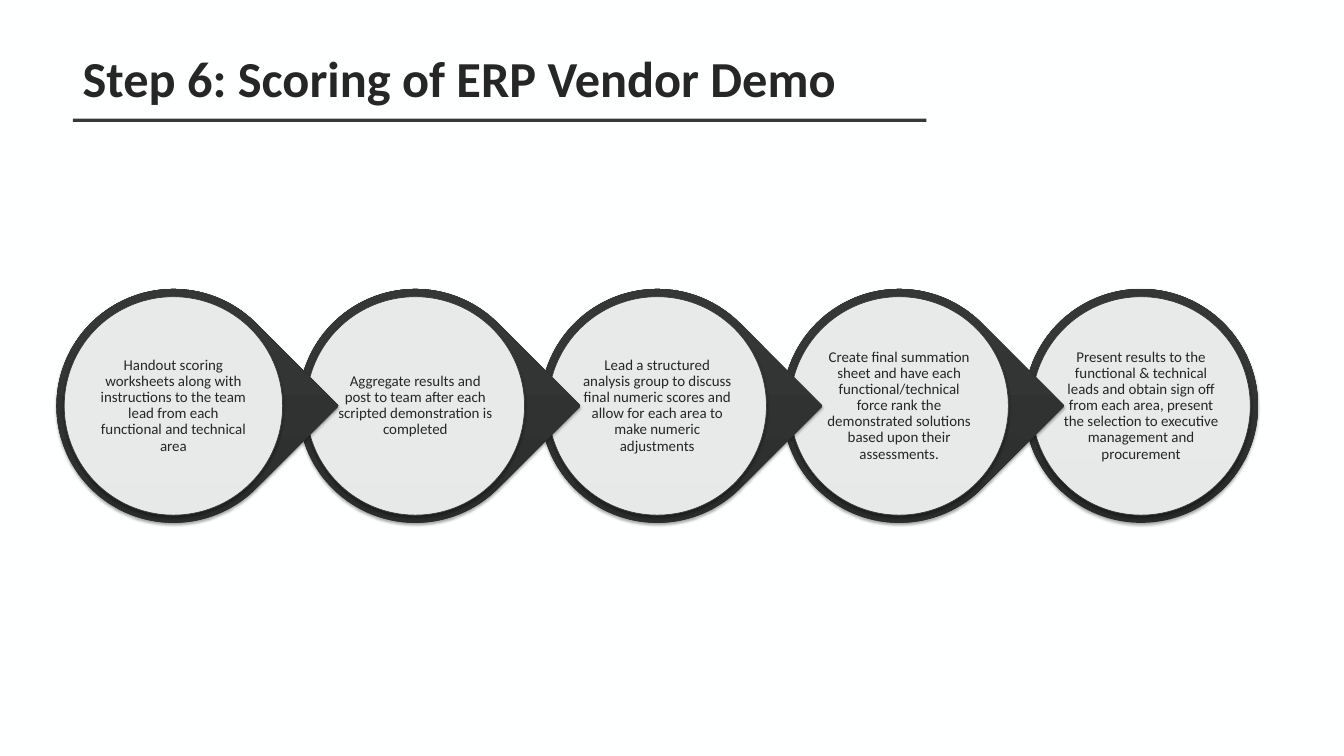
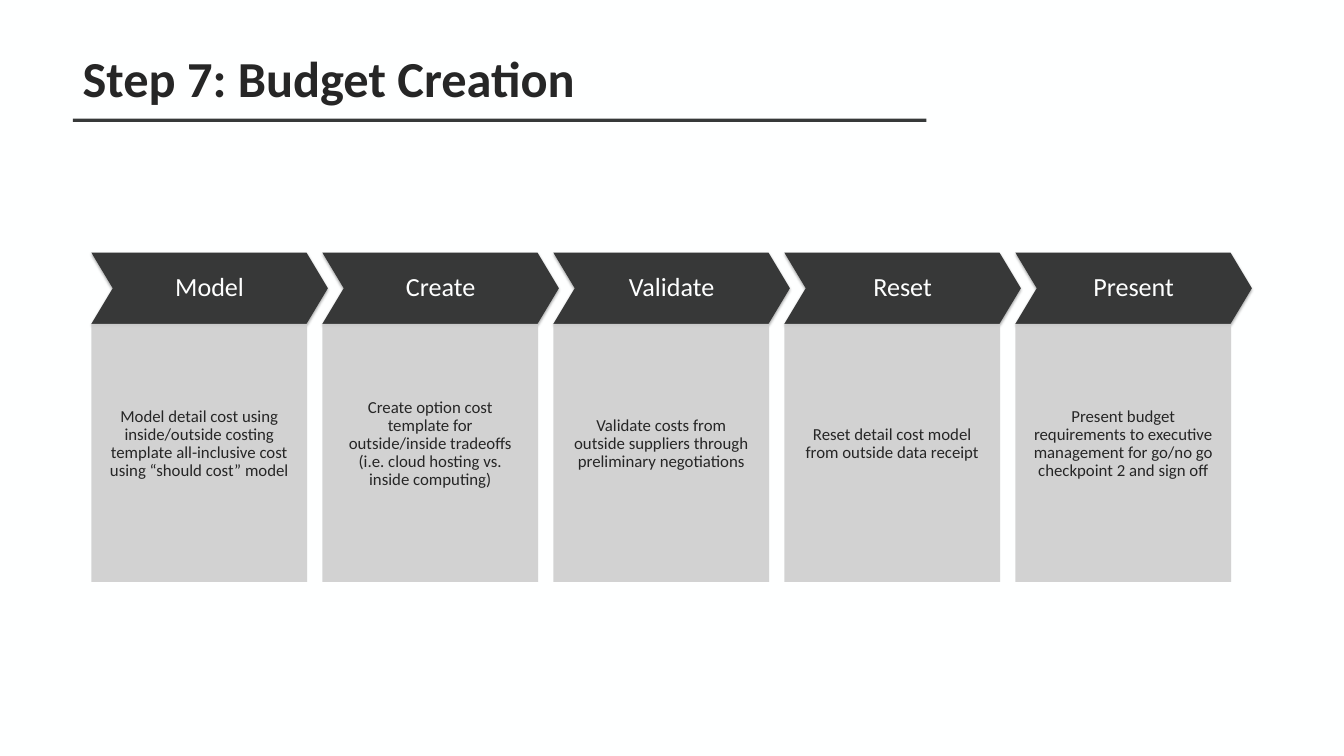
import lxml.etree
import pptx
import pptx.dml.color
import pptx.enum.shapes
import pptx.enum.text
import pptx.oxml.ns
import pptx.util

Pt = pptx.util.Pt
RGBColor = pptx.dml.color.RGBColor
SHAPE = pptx.enum.shapes.MSO_SHAPE
ALIGN = pptx.enum.text.PP_ALIGN
ANCHOR = pptx.enum.text.MSO_ANCHOR
qn = pptx.oxml.ns.qn

SCORING_TITLE = "Step 6: Scoring of ERP Vendor Demo"
SCORING_STEPS = [
    "Handout scoring worksheets along with instructions to the team lead from each "
    "functional and technical area",
    "Aggregate results and post to team after each scripted demonstration is completed",
    "Lead a structured analysis group to discuss final numeric scores and allow for "
    "each area to make numeric adjustments",
    "Create final summation sheet and have each functional/technical force rank the "
    "demonstrated solutions based upon their assessments.",
    "Present results to the functional & technical leads and obtain sign off from each "
    "area, present the selection to executive management and procurement",
]
BUDGET_TITLE = "Step 7: Budget Creation"
BUDGET_PHASES = [
    ("Model", "Model detail cost using inside/outside costing template all-inclusive "
              "cost using “should cost” model"),
    ("Create", "Create option cost template for outside/inside tradeoffs "
               "(i.e. cloud hosting vs. inside computing)"),
    ("Validate", "Validate costs from outside suppliers through preliminary negotiations"),
    ("Reset", "Reset detail cost model from outside data receipt"),
    ("Present", "Present budget requirements to executive management for go/no go "
                "checkpoint 2 and sign off"),
]

FONT = "Calibri"
WHITE = RGBColor(0xFE, 0xFF, 0xFF)
TEXT = RGBColor(0x26, 0x26, 0x26)
RULE = RGBColor(0x37, 0x39, 0x39)
DARK = RGBColor(0x37, 0x38, 0x38)
RING_BOTTOM = RGBColor(0x29, 0x2A, 0x2A)
RING_TOP = RGBColor(0x35, 0x36, 0x36)
PANEL = RGBColor(0xCE, 0xCE, 0xCE)

# Slide 6: rings that point at the next ring
RING_LEFT, RING_TOP_EDGE, RING_SIZE, RING_PITCH = 60.5, 309.6, 250.6, 259.2
DISC_SIZE = 234
# Slide 7: chevron headings above panels
PHASE_LEFT, PHASE_TOP, PHASE_PITCH = 97.9, 270.7, 247.5
CHEVRON_WIDTH, CHEVRON_HEIGHT = 253.4, 76.3
PANEL_WIDTH, PANEL_HEIGHT = 231.2, 276.5


def add_shape(slide, preset, left, top, width, height, color=None):
    shape = slide.shapes.add_shape(preset, Pt(left), Pt(top), Pt(width), Pt(height))
    shape.shadow.inherit = False
    shape.line.fill.background()
    if color is not None:
        shape.fill.solid()
        shape.fill.fore_color.rgb = color
    return shape


def add_alpha(color_element, percent):
    alpha = lxml.etree.SubElement(color_element, qn("a:alpha"))
    alpha.set("val", str(percent * 1000))


def make_translucent(shape):
    add_alpha(shape.element.spPr.find(qn("a:solidFill"))[0], 90)


def add_shadow(shape):
    effects = shape.element.spPr.find(qn("a:effectLst"))
    shadow = lxml.etree.SubElement(
        effects, qn("a:outerShdw"), blurRad=str(Pt(3.1)), dist=str(Pt(1.8)),
        dir="5400000", rotWithShape="0")
    add_alpha(lxml.etree.SubElement(shadow, qn("a:srgbClr"), val="000000"), 35)


def fill_ring(ring):
    """Shade upright from dark at the bottom, whatever the ring's rotation."""
    ring.fill.gradient()
    ring.fill.gradient_angle = 90
    for stop, position, color in zip(
            ring.fill.gradient_stops, (0, 0.8), (RING_BOTTOM, RING_TOP)):
        stop.position = position
        stop.color.rgb = color
    ring.element.spPr.find(qn("a:gradFill")).set("rotWithShape", "0")


def set_insets(frame, left, top, right, bottom):
    frame.margin_left, frame.margin_top = Pt(left), Pt(top)
    frame.margin_right, frame.margin_bottom = Pt(right), Pt(bottom)


def format_font(paragraph, size, color, bold=False):
    for run in paragraph.runs:
        run.font.name = FONT
        run.font.size = Pt(size)
        run.font.bold = bold
        run.font.color.rgb = color


def write_centered(shape, text, size, color, insets):
    frame = shape.text_frame
    frame.text = text
    frame.word_wrap = True
    frame.vertical_anchor = ANCHOR.MIDDLE
    set_insets(frame, *insets)
    paragraph = frame.paragraphs[0]
    paragraph.alignment = ALIGN.CENTER
    paragraph.line_spacing = 0.9
    format_font(paragraph, size, color)


def add_titled_slide(presentation, text):
    slide = presentation.slides.add_slide(presentation.slide_layouts[5])
    add_shape(slide, SHAPE.RECTANGLE, 78.1, 127.1, 914.4, 3.6, RULE)
    title = slide.shapes.title
    title.left, title.top, title.width, title.height = Pt(81.4), Pt(44), Pt(1245), Pt(71.3)
    frame = title.text_frame
    frame.text = text
    frame.auto_size = pptx.enum.text.MSO_AUTO_SIZE.NONE
    frame.vertical_anchor = ANCHOR.TOP
    set_insets(frame, 7.2, 6.5, 7.2, 3.6)
    frame.paragraphs[0].alignment = ALIGN.LEFT
    format_font(frame.paragraphs[0], 54, TEXT, bold=True)
    return slide


def build_scoring(presentation):
    slide = add_titled_slide(presentation, SCORING_TITLE)
    last = len(SCORING_STEPS) - 1
    margin = (RING_SIZE - DISC_SIZE) / 2
    # Right to left, so that each tip lies over the next ring
    for index in range(last, -1, -1):
        left = RING_LEFT + index * RING_PITCH
        preset = SHAPE.OVAL if index == last else SHAPE.TEAR
        ring = add_shape(slide, preset, left, RING_TOP_EDGE, RING_SIZE, RING_SIZE)
        if index < last:
            ring.adjustments[0] = 1
            ring.rotation = 45
        fill_ring(ring)
        add_shadow(ring)
        disc = add_shape(slide, SHAPE.OVAL, left + margin, RING_TOP_EDGE + margin,
                         DISC_SIZE, DISC_SIZE, WHITE)
        make_translucent(disc)
        disc.line.color.rgb = DARK
        disc.line.width = Pt(0.75)
        add_shadow(disc)
        write_centered(disc, SCORING_STEPS[index], 16, TEXT, (0, 0, 0, 0))


def build_budget(presentation):
    slide = add_titled_slide(presentation, BUDGET_TITLE)
    for index, (phase, detail) in enumerate(BUDGET_PHASES):
        left = PHASE_LEFT + index * PHASE_PITCH
        chevron = add_shape(slide, SHAPE.CHEVRON, left, PHASE_TOP,
                            CHEVRON_WIDTH, CHEVRON_HEIGHT, DARK)
        chevron.adjustments[0] = 0.3
        add_shadow(chevron)
        write_centered(chevron, phase, 28, WHITE, (9, 9, 9, 9))
        panel = add_shape(slide, SHAPE.RECTANGLE, left, PHASE_TOP + CHEVRON_HEIGHT,
                          PANEL_WIDTH, PANEL_HEIGHT, PANEL)
        make_translucent(panel)
        write_centered(panel, detail, 18, TEXT, (18, 18, 18, 37))


def main():
    presentation = pptx.Presentation()
    presentation.slide_width, presentation.slide_height = Pt(1440), Pt(810)
    background = presentation.slide_master.background.fill
    background.solid()
    background.fore_color.rgb = WHITE
    build_scoring(presentation)
    build_budget(presentation)
    presentation.save("out.pptx")


if __name__ == "__main__":
    main()
